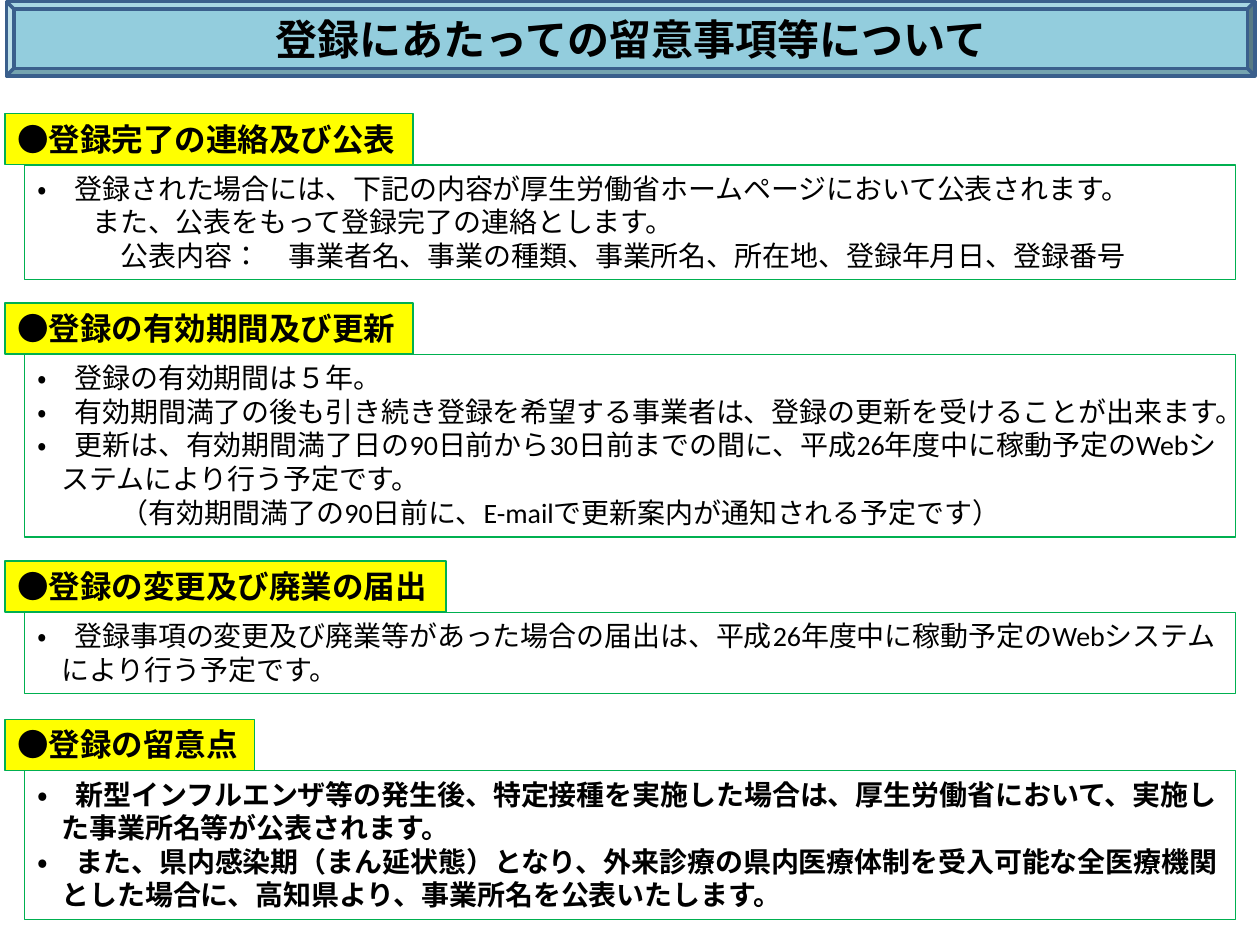
from pptx import Presentation
from pptx.util import Cm, Pt
from pptx.dml.color import RGBColor
from pptx.enum import lang, shapes, text

BLACK = RGBColor(0, 0, 0)
YELLOW = RGBColor(0xFF, 0xFF, 0)
GREEN = RGBColor(0, 0xB0, 0x50)
AQUA = RGBColor(0x93, 0xCD, 0xDD)
NAVY = RGBColor(0x3A, 0x5F, 0x8C)

# Content
TITLE = "登録にあたっての留意事項等について"
ITEM, NOTE, DEEP = (0.49, -0.49), (1.11, 0), (1.69, 0)  # left margin, first line

# heading, top, heading width, body height, bold, (indent, line)
PARTS = [
    ("●登録完了の連絡及び公表", 2.29, 8.23, 2.31, False, [
        (ITEM, "・　登録された場合には、下記の内容が厚生労働省ホームページにおいて公表されます。"),
        (NOTE, "また、公表をもって登録完了の連絡とします。"),
        (DEEP, "公表内容：　事業者名、事業の種類、事業所名、所在地、登録年月日、登録番号"),
    ]),
    ("●登録の有効期間及び更新", 6.11, 8.23, 3.68, False, [
        (ITEM, "・　登録の有効期間は５年。"),
        (ITEM, "・　有効期間満了の後も引き続き登録を希望する事業者は、登録の更新を受けることが出来ます。"),
        (ITEM, "・　更新は、有効期間満了日の90日前から30日前までの間に、平成26年度中に稼動予定のWebシステムにより行う予定です。"),
        (DEEP, "（有効期間満了の90日前に、E-mailで更新案内が通知される予定です）"),
    ]),
    ("●登録の変更及び廃業の届出", 11.31, 8.89, 1.63, False, [
        (ITEM, "・　登録事項の変更及び廃業等があった場合の届出は、平成26年度中に稼動予定のWebシステムにより行う予定です。"),
    ]),
    ("●登録の留意点", 14.5, 5.03, 3.0, True, [
        (ITEM, "・　新型インフルエンザ等の発生後、特定接種を実施した場合は、厚生労働省において、実施した事業所名等が公表されます。"),
        (ITEM, "・　また、県内感染期（まん延状態）となり、外来診療の県内医療体制を受入可能な全医療機関とした場合に、高知県より、事業所名を公表いたします。"),
    ]),
]
HEAD_H, STEP = 1.03, 1.04

deck = Presentation()
deck.slide_width, deck.slide_height = Cm(25.4), Cm(19.05)
slide = deck.slides.add_slide(deck.slide_layouts[5])


def style(para, size, bold):
    look = {"name": "Calibri", "size": Pt(size), "bold": bold,
            "language_id": lang.MSO_LANGUAGE_ID.JAPANESE}
    for run in para.runs:
        for key, val in look.items():
            setattr(run.font, key, val)
        run.font.color.rgb = BLACK


def add_box(x, y, w, h, lines, size, bold, fill=None, wrap=True):
    box = slide.shapes.add_textbox(Cm(x), Cm(y), Cm(w), Cm(h))
    box.line.color.rgb, box.line.width = GREEN, Pt(0.75)
    if fill is not None:
        box.fill.solid()
        box.fill.fore_color.rgb = fill
    frame = box.text_frame
    frame.word_wrap = wrap
    frame.auto_size = text.MSO_AUTO_SIZE.SHAPE_TO_FIT_TEXT
    for i, ((left, first), line) in enumerate(lines):
        para = frame.add_paragraph() if i else frame.paragraphs[0]
        para.text = line
        props = para._p.get_or_add_pPr()
        props.set("marL", str(Cm(left)))
        props.set("indent", str(Cm(first)))
        style(para, size, bold)


# Title on a bevelled bar
area = [Cm(v) for v in (0.13, 0.03, 25.17, 1.5)]
bar = slide.shapes.add_shape(shapes.MSO_SHAPE.BEVEL, *area)
bar.adjustments[0] = 0.099
bar.shadow.inherit = False
bar.fill.solid()
bar.fill.fore_color.rgb = AQUA
bar.line.color.rgb, bar.line.width = NAVY, Pt(2)

title = slide.shapes.title
title._element.addprevious(bar._element)  # bar goes behind the title
title.left, title.top, title.width, title.height = area
frame = title.text_frame
frame.text = TITLE
frame.vertical_anchor = text.MSO_ANCHOR.MIDDLE
frame.auto_size = text.MSO_AUTO_SIZE.NONE
frame.paragraphs[0].alignment = text.PP_ALIGN.CENTER
style(frame.paragraphs[0], 24, True)

# Sections: yellow heading, then outlined body
for head, top, wide, tall, bold, lines in PARTS:
    add_box(0.1, top, wide, HEAD_H, [((0, 0), head)], 18, True, YELLOW, False)
    add_box(0.5, top + STEP, 24.41, tall, lines, 16, bold)

deck.save("out.pptx")
